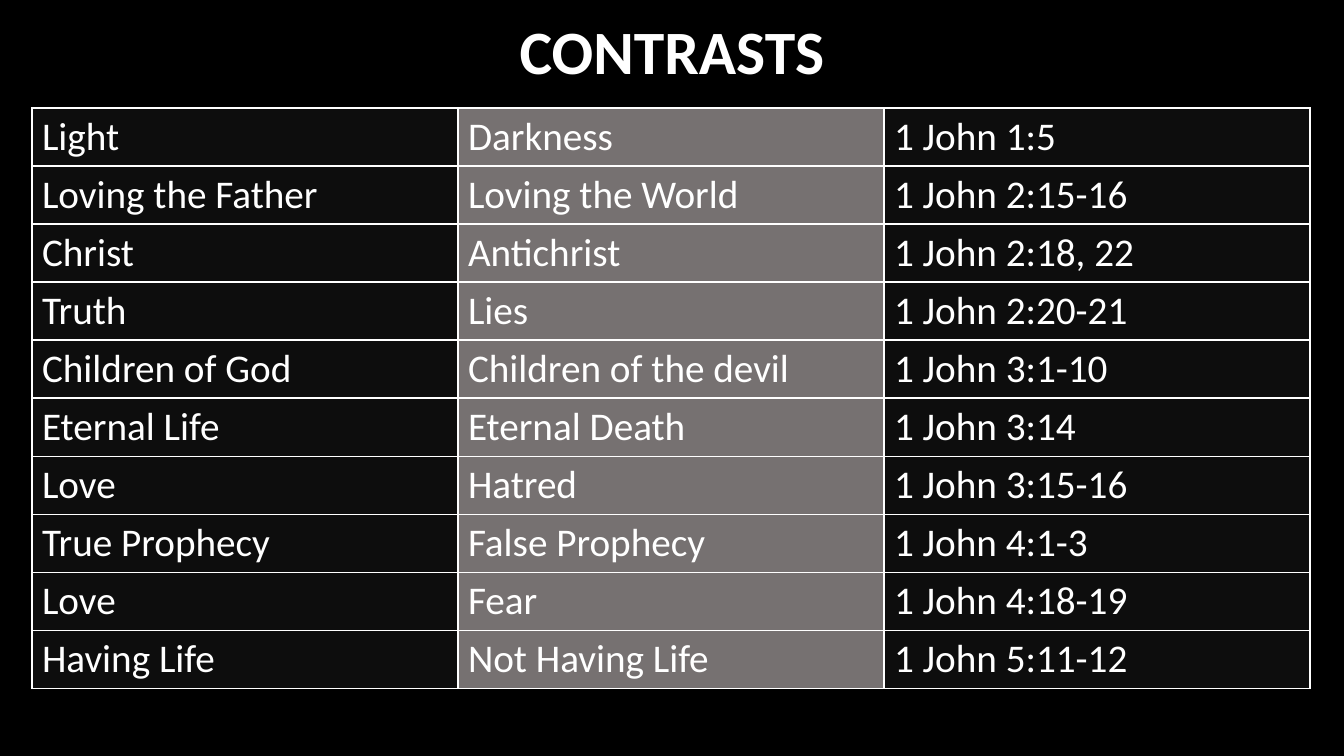
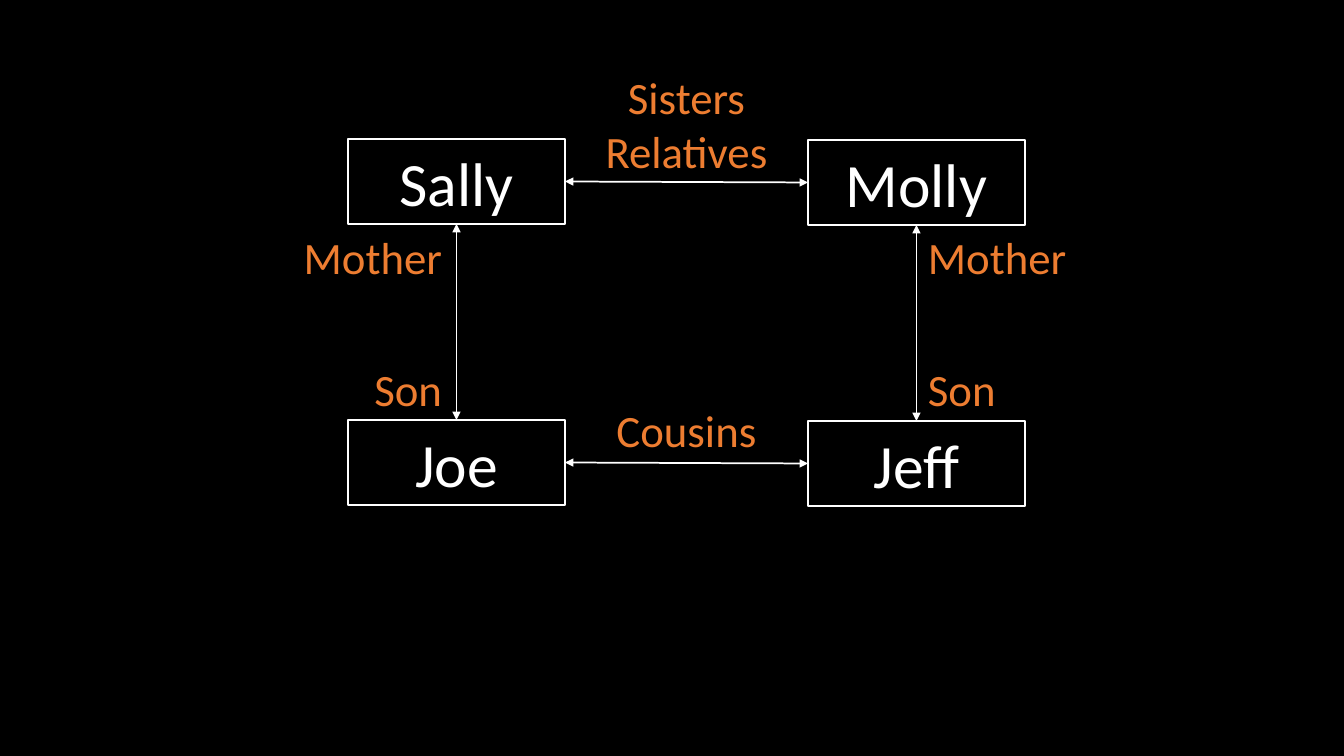
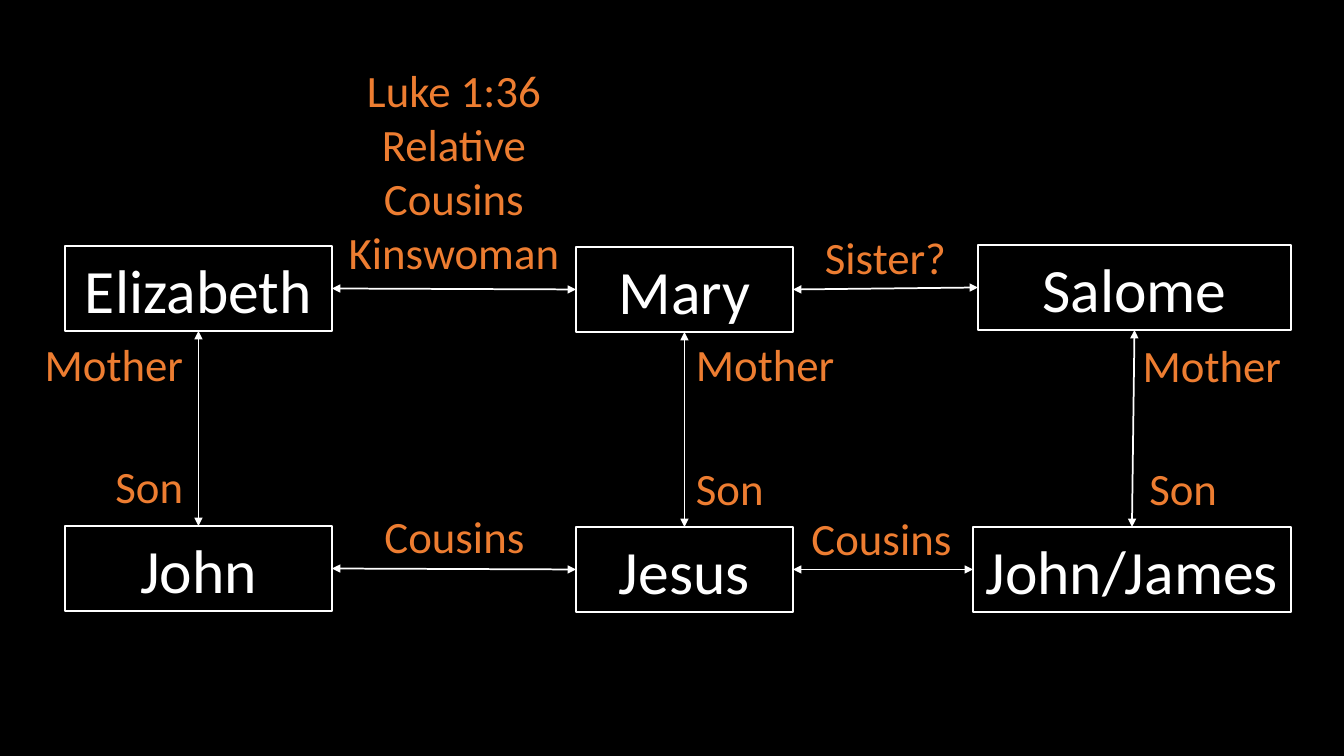
from lxml import etree
from pptx import Presentation
from pptx import util as u
from pptx.dml.color import RGBColor
from pptx.enum import shapes, text
from pptx.oxml.ns import qn

PX = 12192000 / 1344
COLORS = {"black": "000000", "white": "FFFFFF", "orange": "ED7D31",
          "dark": "0D0D0D", "gray": "767171"}
FONT = "Calibri"
NAME_STYLE = {"size": u.Pt(44), "color": "white"}
LABEL_STYLE = {"size": u.Pt(32), "color": "orange"}
CELL_STYLE = {"size": u.Pt(28), "color": "white"}
TITLE_STYLE = {"size": u.Pt(44), "color": "white", "bold": True}
LEFT, CENTER, RIGHT = text.PP_ALIGN.LEFT, text.PP_ALIGN.CENTER, text.PP_ALIGN.RIGHT
TOP_SIDE, LEFT_SIDE, BOTTOM_SIDE, RIGHT_SIDE = range(4)
BOX_HEIGHT = 85
LINE_HEIGHT, LABEL_PADDING = 54, 11


def px(*lengths):
    return [u.Emu(round(length * PX)) for length in lengths]


def write(frame, lines, style, align):
    """Fill a text frame, one paragraph per line, in the given style."""
    frame.word_wrap = True
    frame.text = "\n".join(lines)
    for paragraph in frame.paragraphs:
        paragraph.alignment = align
        font = paragraph.runs[0].font
        font.name = FONT
        for key, value in style.items():
            if key == "color":
                font.color.rgb = RGBColor.from_string(COLORS[value])
            else:
                setattr(font, key, value)


presentation = Presentation()
presentation.slide_width, presentation.slide_height = px(1344, 756)
background = presentation.slide_master.background.fill
background.solid()
background.fore_color.rgb = RGBColor.from_string(COLORS["black"])
title_only, blank = presentation.slide_layouts[5], presentation.slide_layouts[6]

# Contrasts table
contrasts = [
    ("Light", "Darkness", "1 John 1:5"),
    ("Loving the Father", "Loving the World", "1 John 2:15-16"),
    ("Christ", "Antichrist", "1 John 2:18, 22"),
    ("Truth", "Lies", "1 John 2:20-21"),
    ("Children of God", "Children of the devil", "1 John 3:1-10"),
    ("Eternal Life", "Eternal Death", "1 John 3:14"),
    ("Love", "Hatred", "1 John 3:15-16"),
    ("True Prophecy", "False Prophecy", "1 John 4:1-3"),
    ("Love", "Fear", "1 John 4:18-19"),
    ("Having Life", "Not Having Life", "1 John 5:11-12"),
]
column_fills = ["dark", "gray", "dark"]
row_height, column_width = 58, 426

slide = presentation.slides.add_slide(title_only)
title = slide.shapes.title
title.left, title.top, title.width, title.height = px(0, 2, 1344, 106)
title.text_frame.vertical_anchor = text.MSO_ANCHOR.MIDDLE
write(title.text_frame, ["CONTRASTS"], TITLE_STYLE, CENTER)
title.text_frame.paragraphs[0].line_spacing = 0.9

table = slide.shapes.add_table(
    len(contrasts), len(column_fills),
    *px(32, 108, column_width * len(column_fills), row_height * len(contrasts))).table
table.first_row = table.horz_banding = False
for row, values in enumerate(contrasts):
    for column, value in enumerate(values):
        cell = table.cell(row, column)
        write(cell.text_frame, [value], CELL_STYLE, LEFT)
        properties = cell._tc.get_or_add_tcPr()
        for side in ("lnL", "lnR", "lnT", "lnB"):
            border = etree.SubElement(properties, qn(f"a:{side}"), w=str(u.Pt(1)))
            border_fill = etree.SubElement(border, qn("a:solidFill"))
            etree.SubElement(border_fill, qn("a:srgbClr"), val=COLORS["white"])
        cell.fill.solid()
        cell.fill.fore_color.rgb = RGBColor.from_string(COLORS[column_fills[column]])

# Family diagrams: boxes are name: (left, top, width),
# across and down are pairs of names, labels are (lines, align, left, top, width)
families = [
    {
        "boxes": {
            "Sally": (348, 139, 217), "Molly": (808, 140, 217),
            "Joe": (348, 420, 217), "Jeff": (808, 421, 217),
        },
        "across": [("Sally", "Molly"), ("Joe", "Jeff")],
        "down": [("Sally", "Joe"), ("Molly", "Jeff")],
        "labels": [
            (["Sisters", "Relatives"], CENTER, 592, 65, 189),
            (["Mother"], LEFT, 918, 225, 189),
            (["Son"], LEFT, 918, 357, 189),
            (["Mother"], RIGHT, 263, 225, 189),
            (["Son"], RIGHT, 263, 357, 189),
            (["Cousins"], CENTER, 592, 398, 189),
        ],
    },
    {
        "boxes": {
            "Elizabeth": (65, 246, 267), "Mary": (576, 247, 217),
            "Salome": (978, 245, 313), "John": (65, 526, 267),
            "Jesus": (576, 527, 217), "John/James": (973, 527, 318),
        },
        "across": [("Elizabeth", "Mary"), ("Mary", "Salome"),
                   ("John", "Jesus"), ("Jesus", "John/James")],
        "down": [("Elizabeth", "John"), ("Mary", "Jesus"), ("Salome", "John/James")],
        "labels": [
            (["Luke 1:36", "Relative", "Cousins", "Kinswoman"], CENTER, 333, 58, 242),
            (["Sister?"], CENTER, 794, 225, 183),
            (["Mother"], RIGHT, 4, 332, 189),
            (["Son"], RIGHT, 4, 454, 189),
            (["Mother"], LEFT, 686, 332, 189),
            (["Son"], LEFT, 686, 456, 189),
            (["Mother"], RIGHT, 1102, 333, 189),
            (["Son"], RIGHT, 1038, 456, 189),
            (["Cousins"], CENTER, 360, 504, 189),
            (["Cousins"], CENTER, 792, 506, 179),
        ],
    },
]

for family in families:
    slide = presentation.slides.add_slide(blank)
    boxes = {}
    for name, (left, top, width) in family["boxes"].items():
        box = slide.shapes.add_shape(
            shapes.MSO_SHAPE.RECTANGLE, *px(left, top, width, BOX_HEIGHT))
        box.shadow.inherit = False
        box.fill.background()
        box.line.color.rgb = RGBColor.from_string(COLORS["white"])
        box.line.width = u.Pt(1.25)
        write(box.text_frame, [name], NAME_STYLE, CENTER)
        boxes[name] = box

    links = [(pair, RIGHT_SIDE, LEFT_SIDE) for pair in family["across"]]
    links += [(pair, BOTTOM_SIDE, TOP_SIDE) for pair in family["down"]]
    for (start, end), start_side, end_side in links:
        arrow = slide.shapes.add_connector(shapes.MSO_CONNECTOR.STRAIGHT, 0, 0, 0, 0)
        arrow.begin_connect(boxes[start], start_side)
        arrow.end_connect(boxes[end], end_side)
        arrow.line.color.rgb = RGBColor.from_string(COLORS["white"])
        arrow.line.width = u.Pt(1.25)
        properties = arrow.element.spPr
        for tip in ("headEnd", "tailEnd"):
            etree.SubElement(properties.find(qn("a:ln")), qn(f"a:{tip}"), type="triangle")
        etree.SubElement(properties, qn("a:effectLst"))

    for lines, align, left, top, width in family["labels"]:
        height = LABEL_PADDING + LINE_HEIGHT * len(lines)
        label = slide.shapes.add_textbox(*px(left, top, width, height))
        write(label.text_frame, lines, LABEL_STYLE, align)
        label.text_frame.auto_size = text.MSO_AUTO_SIZE.SHAPE_TO_FIT_TEXT

presentation.save("out.pptx")
